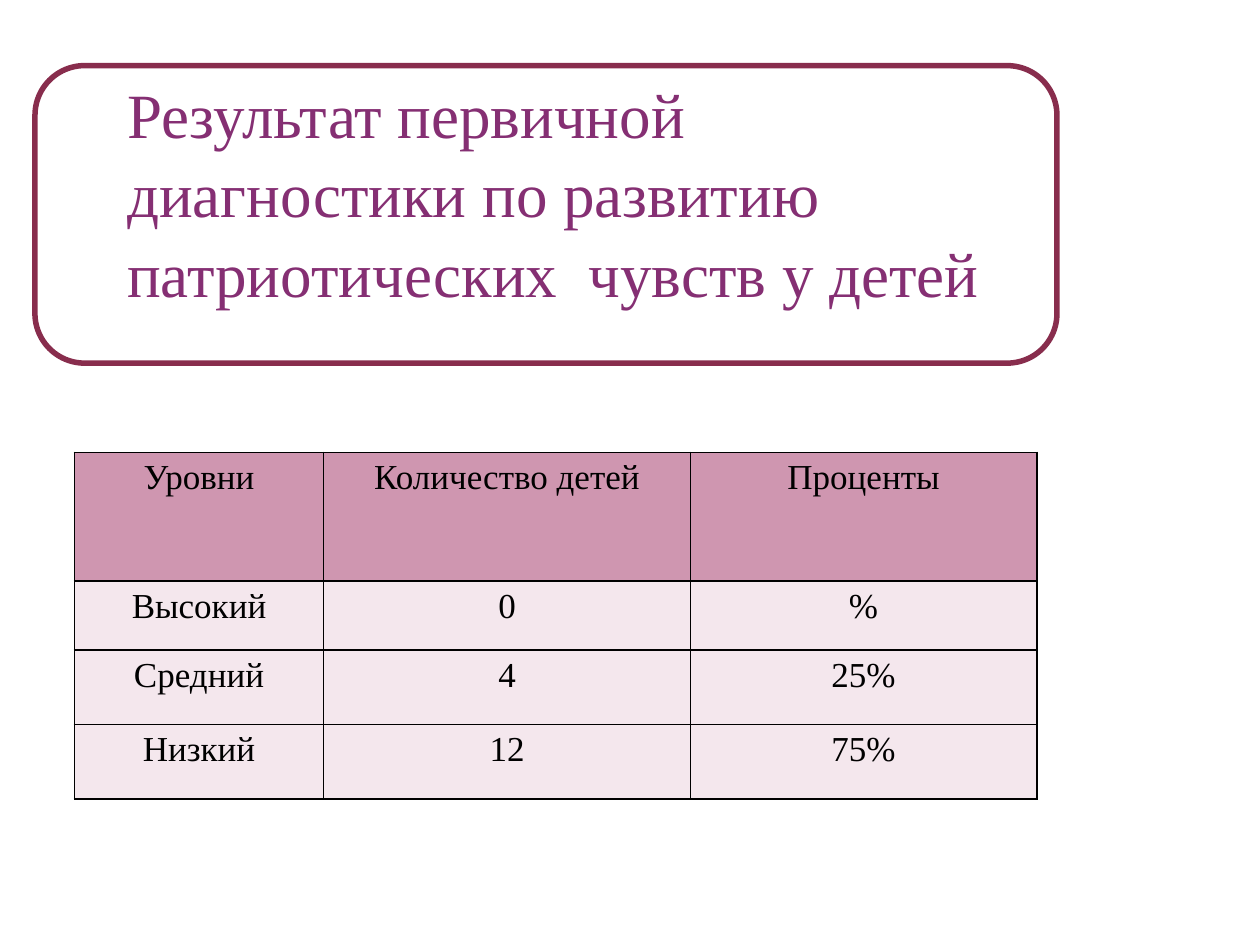
from lxml import etree
from pptx import Presentation
from pptx.dml.color import RGBColor
from pptx.enum import shapes, text
from pptx.oxml import ns
from pptx.util import Pt

COLORS = {
    "frame": "882D4D",
    "title": "852F73",
    "header": "CF96B0",
    "body": "F4E7ED",
    "ink": "000000",
}


class SlideBuilder:
    font_name = "Times New Roman"
    border_width = 1

    def __init__(self, deck):
        self.page = deck.slides.add_slide(deck.slide_layouts[6])

    def color(self, name):
        return RGBColor.from_string(COLORS[name])

    def format_text(self, paragraph, size, color, spacing):
        paragraph.line_spacing = spacing
        for span in paragraph.runs:
            span.font.name = self.font_name
            span.font.size = Pt(size)
            span.font.color.rgb = self.color(color)

    def frame(self, left, top, width, height, line_width):
        box = self.page.shapes.add_shape(
            shapes.MSO_SHAPE.ROUNDED_RECTANGLE,
            Pt(left), Pt(top), Pt(width), Pt(height),
        )
        box.shadow.inherit = False
        box.fill.background()
        box.line.color.rgb = self.color("frame")
        box.line.width = Pt(line_width)

    def title(self, wording, left, top, width, height, size):
        box = self.page.shapes.add_textbox(Pt(left), Pt(top), Pt(width), Pt(height))
        box.text_frame.word_wrap = True
        box.text_frame.auto_size = text.MSO_AUTO_SIZE.SHAPE_TO_FIT_TEXT
        box.text_frame.text = wording
        self.format_text(box.text_frame.paragraphs[0], size, "title", 1.05)

    def borders(self, cell):
        properties = cell._tc.get_or_add_tcPr()
        for index, side in enumerate(("lnL", "lnR", "lnT", "lnB")):
            line = etree.Element(ns.qn(f"a:{side}"), w=str(Pt(self.border_width)))
            fill = etree.SubElement(line, ns.qn("a:solidFill"))
            etree.SubElement(fill, ns.qn("a:srgbClr"), val=COLORS["ink"])
            properties.insert(index, line)

    def table(self, rows, left, top, widths, heights, size):
        table = self.page.shapes.add_table(
            len(rows), len(widths),
            Pt(left), Pt(top), Pt(sum(widths)), Pt(sum(heights)),
        ).table
        for column, width in zip(table.columns, widths):
            column.width = Pt(width)
        for row_index, (values, height) in enumerate(zip(rows, heights)):
            table.rows[row_index].height = Pt(height)
            for column_index, value in enumerate(values):
                cell = table.cell(row_index, column_index)
                cell.margin_left = cell.margin_right = Pt(5)
                cell.margin_top = cell.margin_bottom = Pt(0)
                cell.fill.solid()
                cell.fill.fore_color.rgb = self.color("body" if row_index else "header")
                cell.text_frame.text = value
                paragraph = cell.text_frame.paragraphs[0]
                paragraph.alignment = text.PP_ALIGN.CENTER
                self.format_text(paragraph, size, "ink", 1.15)
                self.borders(cell)


def main():
    deck = Presentation()
    deck.slide_width, deck.slide_height = Pt(720), Pt(540)
    slide = SlideBuilder(deck)
    slide.table(
        [
            ("Уровни", "Количество детей", "Проценты"),
            ("Высокий", "0", "%"),
            ("Средний", "4", "25%"),
            ("Низкий", "12", "75%"),
        ],
        42.5, 258.5, (142.5, 209.5, 198), (73.5, 39.5, 42.5, 42.5), 20,
    )
    slide.frame(20, 37.5, 584, 170, 3.15)
    slide.title(
        "Результат первичной диагностики по развитию патриотических  чувств у детей",
        65.5, 37.5, 533, 138, 36,
    )
    deck.save("out.pptx")


if __name__ == "__main__":
    main()
